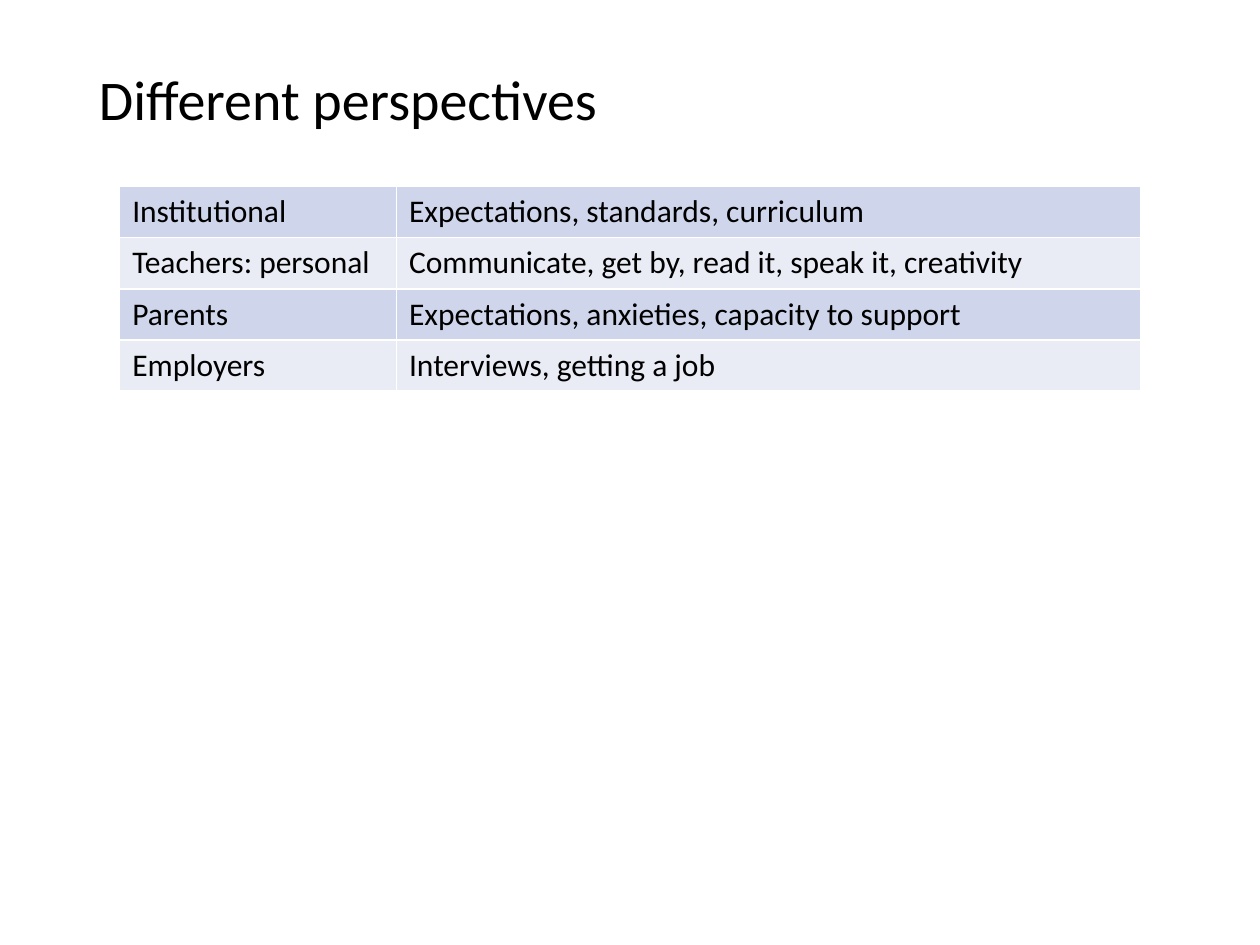
from dataclasses import dataclass

from pptx import Presentation
from pptx.dml.color import RGBColor as Color
from pptx.enum.text import MSO_ANCHOR as Anchor
from pptx.util import Pt


@dataclass(frozen=True)
class Theme:
    font: str = "Calibri"
    text: Color = Color(0, 0, 0)
    bands: tuple = (Color(0xCF, 0xD5, 0xEA), Color(0xE9, 0xEB, 0xF5))
    title_size: int = 32
    table_size: int = 18


THEME = Theme()

PERSPECTIVES = [
    ("Institutional", "Expectations, standards, curriculum"),
    ("Teachers: personal", "Communicate, get by, read it, speak it, creativity"),
    ("Parents", "Expectations, anxieties, capacity to support"),
    ("Employers", "Interviews, getting a job"),
]
COLUMN_WIDTHS = (158.2, 425.4)
ROW_HEIGHT = 29.2


def write(text_frame, text, size):
    paragraph = text_frame.paragraphs[0]
    paragraph.text = text
    paragraph.font.name = THEME.font
    paragraph.font.size = Pt(size)
    paragraph.font.color.rgb = THEME.text
    return paragraph


def add_title(slide, text):
    box = slide.shapes.add_textbox(Pt(49.5), Pt(27.4), Pt(621), Pt(62.6))
    frame = box.text_frame
    frame.word_wrap = True
    frame.vertical_anchor = Anchor.MIDDLE
    write(frame, text, THEME.title_size).line_spacing = 0.9


def add_perspectives_table(slide, left, top):
    table = slide.shapes.add_table(
        len(PERSPECTIVES), len(COLUMN_WIDTHS), Pt(left), Pt(top),
        Pt(sum(COLUMN_WIDTHS)), Pt(ROW_HEIGHT * len(PERSPECTIVES)),
    ).table
    table.first_row = False
    for column, width in zip(table.columns, COLUMN_WIDTHS):
        column.width = Pt(width)
    for index, (row, texts) in enumerate(zip(table.rows, PERSPECTIVES)):
        row.height = Pt(ROW_HEIGHT)
        for cell, text in zip(row.cells, texts):
            cell.fill.solid()
            cell.fill.fore_color.rgb = THEME.bands[index % 2]
            write(cell.text_frame, text, THEME.table_size)


def main():
    presentation = Presentation()
    presentation.slide_width = Pt(720)
    presentation.slide_height = Pt(540)
    slide = presentation.slides.add_slide(presentation.slide_layouts[6])
    add_title(slide, "Different perspectives")
    add_perspectives_table(slide, 68.4, 106.6)
    presentation.save("out.pptx")


if __name__ == "__main__":
    main()
